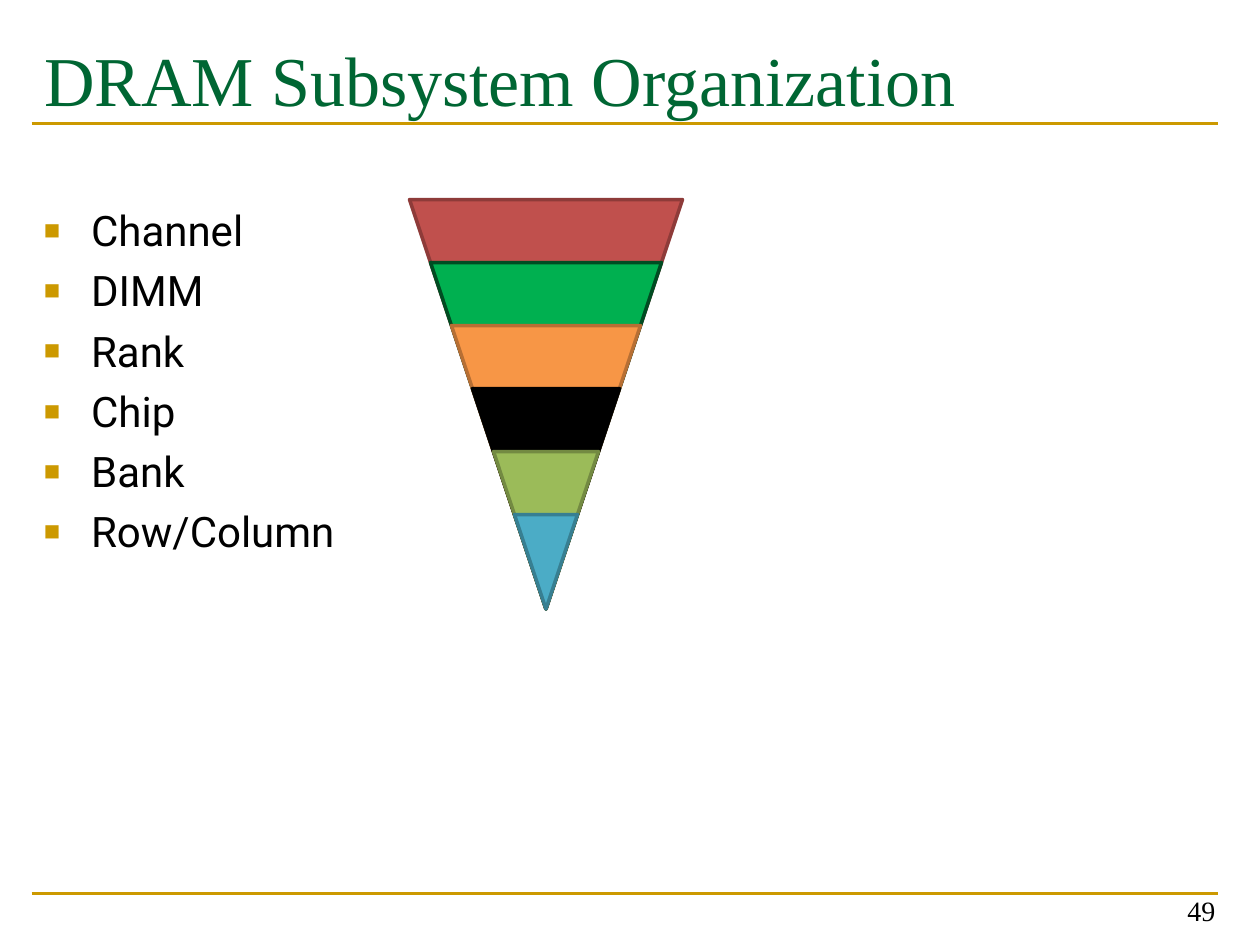
from lxml import etree
from pptx import Presentation
from pptx.dml.color import RGBColor
from pptx.enum.shapes import MSO_CONNECTOR, MSO_SHAPE
from pptx.enum.text import MSO_ANCHOR, MSO_AUTO_SIZE, PP_ALIGN
from pptx.oxml.ns import qn
from pptx.util import Pt

# Content: each level with its fill and outline, from outermost to innermost
TITLE = "DRAM Subsystem Organization"
PAGE = "49"
LEVELS = [
    ("Channel", "C0504D", "8E3B39"),
    ("DIMM", "00B050", "004C22"),
    ("Rank", "F79646", "B76F34"),
    ("Chip", "000000", "000000"),
    ("Bank", "9BBB59", "738A42"),
    ("Row/Column", "4BACC6", "377F92"),
]
SERIF, SANS = "Times New Roman", "Roboto"
GOLD, GREEN, BLACK = "CC9900", "006633", "000000"

# Layout, in points
LEFT, WIDTH = 18, 678
RULES = (70.6, 510.5)
FUNNEL_LEFT, FUNNEL_TOP, FUNNEL_W, FUNNEL_H = 234, 114, 156, 234
STEP_X, STEP_Y = 12, 36


def rgb(value):
    return RGBColor.from_string(value)


def place(shape, x, y, w, h):
    shape.left, shape.top, shape.width, shape.height = Pt(x), Pt(y), Pt(w), Pt(h)


def format_text(p, font, size, color):
    for r in p.runs:
        r.font.name, r.font.size = font, Pt(size)
        r.font.color.rgb = rgb(color)


def add_bullet(p, char, color, percent, indent):
    pPr = p._p.get_or_add_pPr()
    pPr.set("marL", str(Pt(indent)))
    pPr.set("indent", str(-Pt(indent)))
    clr = etree.SubElement(pPr, qn("a:buClr"))
    etree.SubElement(clr, qn("a:srgbClr"), val=color)
    etree.SubElement(pPr, qn("a:buSzPct"), val=str(percent * 1000))
    etree.SubElement(pPr, qn("a:buFont"), typeface="Arial")
    etree.SubElement(pPr, qn("a:buChar"), char=char)


prs = Presentation()
prs.slide_width, prs.slide_height = Pt(720), Pt(540)
s = prs.slides.add_slide(prs.slide_layouts[5])

# Gold rules
for y in RULES:
    rule = s.shapes.add_connector(
        MSO_CONNECTOR.STRAIGHT, Pt(LEFT), Pt(y), Pt(LEFT + WIDTH), Pt(y))
    rule.line.color.rgb = rgb(GOLD)
    rule.line.width = Pt(1.5)
    etree.SubElement(rule._element.spPr, qn("a:effectLst"))

# Title
title = s.shapes.title
place(title, LEFT, 12, WIDTH, 84)
tf = title.text_frame
tf.text = TITLE
tf.auto_size = MSO_AUTO_SIZE.NONE
tf.vertical_anchor = MSO_ANCHOR.TOP
tf.margin_top = Pt(8.6)
tf.paragraphs[0].alignment = PP_ALIGN.LEFT
format_text(tf.paragraphs[0], SERIF, 40, GREEN)

# Bulleted levels
body = s.shapes.add_textbox(Pt(LEFT), Pt(78.5), Pt(WIDTH), Pt(409))
tf = body.text_frame
tf.word_wrap = True
tf.margin_top = Pt(38.5)
for i, (name, _, _) in enumerate(LEVELS):
    p = tf.add_paragraph() if i else tf.paragraphs[0]
    p.text = name
    p.space_before = Pt(5.6 if i else 0)
    add_bullet(p, "■", GOLD, 65, 27)
    format_text(p, SANS, 24, BLACK)

# Page number
number = s.shapes.add_textbox(Pt(533.5), Pt(497.5), Pt(168), Pt(36))
tf = number.text_frame
tf.word_wrap = True
tf.vertical_anchor = MSO_ANCHOR.BOTTOM
tf.text = PAGE
tf.paragraphs[0].alignment = PP_ALIGN.RIGHT
format_text(tf.paragraphs[0], SERIF, 16, BLACK)

# Funnel: nested triangles sharing the bottom tip
for i, (_, fill, line) in enumerate(LEVELS):
    sp = s.shapes.add_shape(
        MSO_SHAPE.FLOWCHART_MERGE,
        Pt(FUNNEL_LEFT + i * STEP_X), Pt(FUNNEL_TOP + i * STEP_Y),
        Pt(FUNNEL_W - 2 * i * STEP_X), Pt(FUNNEL_H - i * STEP_Y))
    sp.shadow.inherit = False
    sp.fill.solid()
    sp.fill.fore_color.rgb = rgb(fill)
    sp.line.color.rgb = rgb(line)
    sp.line.width = Pt(2)

prs.save("out.pptx")
